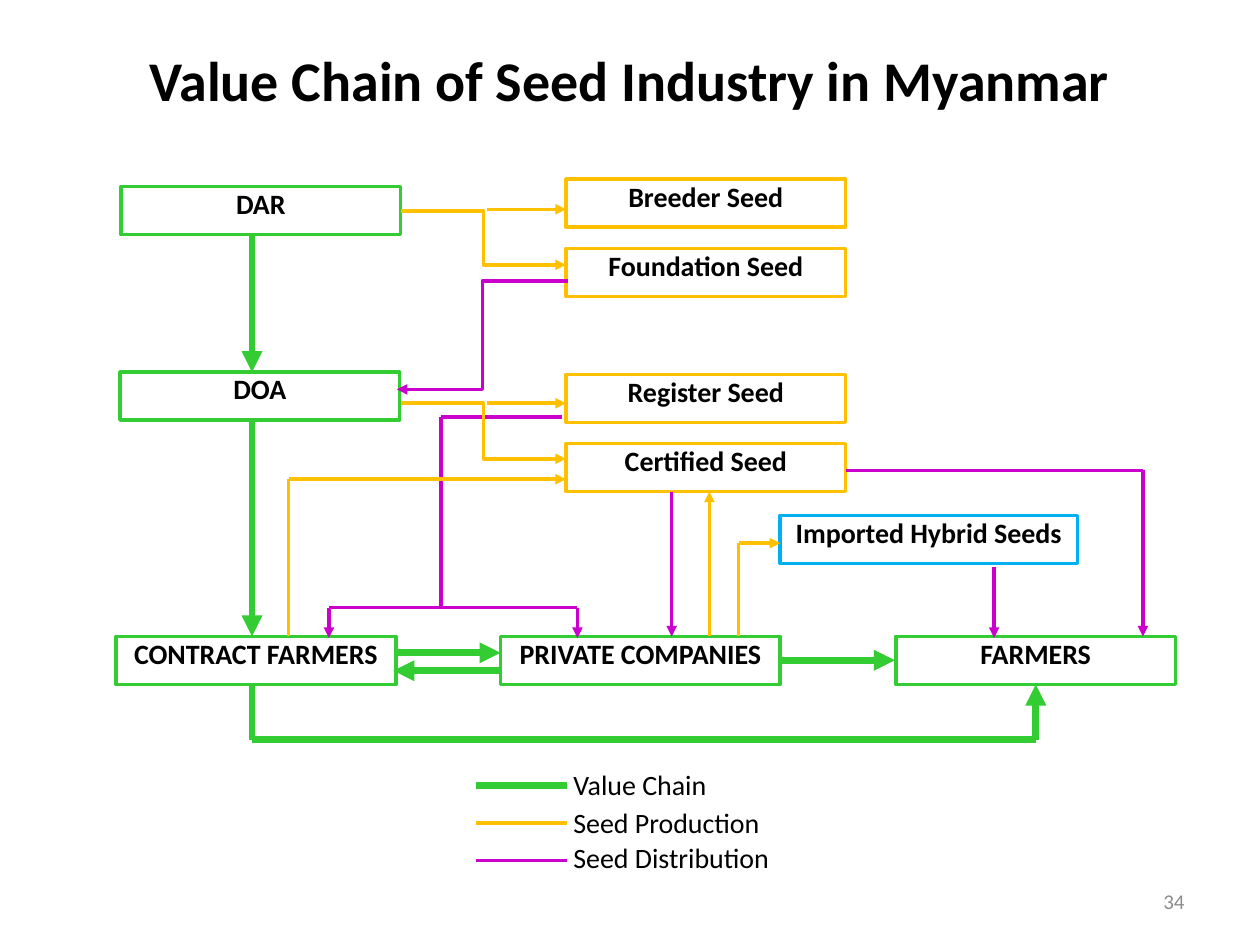
from itertools import pairwise

from lxml import etree
from pptx import Presentation
from pptx.dml.color import RGBColor
from pptx.enum.shapes import MSO_CONNECTOR, MSO_SHAPE
from pptx.enum.text import MSO_ANCHOR, PP_ALIGN
from pptx.oxml.ns import qn
from pptx.util import Cm, Pt

STRAIGHT, ELBOW = MSO_CONNECTOR.STRAIGHT, MSO_CONNECTOR.ELBOW
RECTANGLE = MSO_SHAPE.RECTANGLE
TOP, MIDDLE = MSO_ANCHOR.TOP, MSO_ANCHOR.MIDDLE
LEFT, CENTER, RIGHT = PP_ALIGN.LEFT, PP_ALIGN.CENTER, PP_ALIGN.RIGHT

FONT = "Calibri"
BLACK, WHITE, GRAY = "000000", "FFFFFF", "8C8C8C"
GREEN, AMBER, PURPLE, BLUE = "33CC33", "FFC000", "CC00CC", "00B0F0"
LINE_WIDTH = {GREEN: 4, AMBER: 2, PURPLE: 2}

BOX_WIDTH, BOX_HEIGHT = 5.64, 0.97
SEED_LEFT = 9.07
ACTOR_TOP = 9.22
ACTOR_BOTTOM = ACTOR_TOP + BOX_HEIGHT

# Boxes: label, left, top, width, outline (cm within the diagram)
BOXES = [
    ("DAR", 0.1, 0.15, BOX_WIDTH, GREEN),
    ("DOA", 0.08, 3.89, BOX_WIDTH, GREEN),
    ("Breeder Seed", SEED_LEFT, 0, BOX_WIDTH, AMBER),
    ("Foundation Seed", SEED_LEFT, 1.4, BOX_WIDTH, AMBER),
    ("Register Seed", SEED_LEFT, 3.94, BOX_WIDTH, AMBER),
    ("Certified Seed", SEED_LEFT, 5.33, BOX_WIDTH, AMBER),
    ("Imported Hybrid Seeds", 13.39, 6.78, 5.99, BLUE),
    ("CONTRACT FARMERS", 0, ACTOR_TOP, BOX_WIDTH, GREEN),
    ("PRIVATE COMPANIES", 7.75, ACTOR_TOP, BOX_WIDTH, GREEN),
    ("FARMERS", 15.72, ACTOR_TOP, BOX_WIDTH, GREEN),
]

# Routes of straight pieces: colour, arrow at the end, points
ROUTES = [
    # Seed distribution
    (PURPLE, False, [(8.99, 4.8), (6.55, 4.8), (6.55, 8.64)]),
    (PURPLE, True, [(6.55, 8.64), (4.29, 8.64), (4.29, 9.25)]),
    (PURPLE, True, [(6.55, 8.64), (9.3, 8.64), (9.3, 9.25)]),
    (PURPLE, True, [(14.71, 5.87), (20.7, 5.87), (20.7, ACTOR_TOP)]),
    (PURPLE, True, [(11.2, 6.3), (11.2, ACTOR_TOP)]),
    (PURPLE, True, [(17.7, 7.82), (17.7, 9.25)]),
    # Seed production
    (AMBER, True, [(3.48, ACTOR_TOP), (3.48, 6.05), (SEED_LEFT, 6.05)]),
    (AMBER, True, [(7.47, 0.61), (SEED_LEFT, 0.61)]),
    (AMBER, True, [(7.47, 4.52), (SEED_LEFT, 4.52)]),
    (AMBER, True, [(11.96, ACTOR_TOP), (11.96, 6.3)]),
    (AMBER, True, [(12.55, ACTOR_TOP), (12.55, 7.34), (13.39, 7.34)]),
    # Value chain
    (GREEN, True, [(2.74, 1.12), (2.74, 3.89)]),
    (GREEN, True, [(2.74, 4.85), (2.74, ACTOR_TOP)]),
    (GREEN, True, [(5.64, 9.55), (7.75, 9.55)]),
    (GREEN, True, [(7.72, 9.91), (5.59, 9.91)]),
    (GREEN, True, [(13.39, 9.7), (15.7, 9.7)]),
    (GREEN, True, [(2.74, ACTOR_BOTTOM), (2.74, 11.3), (18.54, 11.3), (18.54, ACTOR_BOTTOM)]),
]

# Elbow connectors: colour, start, end
ELBOWS = [
    (AMBER, (5.74, 0.64), (SEED_LEFT, 1.73)),
    (AMBER, (5.74, 4.52), (SEED_LEFT, 5.64)),
    (PURPLE, (9.12, 2.06), (5.66, 4.24)),
]

# Legend: label, colour, label top, label width
LEGEND = [
    ("Value Chain", GREEN, 0, 3.58),
    ("Seed Production", AMBER, 0.76, 5.44),
    ("Seed Distribution", PURPLE, 1.47, 5.44),
]


def rgb(color):
    return RGBColor.from_string(color)


def write(text_frame, text, size, color, align, anchor, bold=False):
    text_frame.word_wrap = True
    text_frame.vertical_anchor = anchor
    paragraph = text_frame.paragraphs[0]
    paragraph.alignment = align
    run = paragraph.add_run()
    run.text = text
    run.font.name = FONT
    run.font.size = Pt(size)
    run.font.bold = bold
    run.font.color.rgb = rgb(color)


def add_label(slide, text, left, top, width, height, align, outline=None, bold=False):
    shape = slide.shapes.add_shape(RECTANGLE, Cm(left), Cm(top), Cm(width), Cm(height))
    shape.shadow.inherit = False
    shape.fill.solid()
    shape.fill.fore_color.rgb = rgb(WHITE)
    if outline:
        shape.line.color.rgb = rgb(outline)
        shape.line.width = Pt(2)
    else:
        shape.line.fill.background()
    text_frame = shape.text_frame
    text_frame.margin_left = text_frame.margin_right = 0
    text_frame.margin_top = text_frame.margin_bottom = 0
    write(text_frame, text, 16, BLACK, align, TOP, bold)


def add_line(slide, kind, start, end, color, arrow, left, top):
    connector = slide.shapes.add_connector(
        kind, Cm(left + start[0]), Cm(top + start[1]), Cm(left + end[0]), Cm(top + end[1]))
    connector.line.color.rgb = rgb(color)
    connector.line.width = Pt(LINE_WIDTH[color])
    if arrow:
        etree.SubElement(connector.line._get_or_add_ln(), qn("a:tailEnd"), type="triangle")
    etree.SubElement(connector._element.spPr, qn("a:effectLst"))


def add_title(slide, left, top, width, height):
    title = slide.shapes.title
    title.left, title.top = Cm(left), Cm(top)
    title.width, title.height = Cm(width), Cm(height)
    write(title.text_frame, "Value Chain of Seed Industry in Myanmar",
          32, BLACK, CENTER, MIDDLE, bold=True)


def add_diagram(slide, left, top):
    for text, x, y, width, outline in BOXES:
        add_label(slide, text, left + x, top + y, width, BOX_HEIGHT, CENTER, outline, bold=True)
    for color, arrow, points in ROUTES:
        for start, end in pairwise(points):
            is_last = end == points[-1]
            add_line(slide, STRAIGHT, start, end, color, arrow and is_last, left, top)
    for color, start, end in ELBOWS:
        add_line(slide, ELBOW, start, end, color, True, left, top)


def add_legend(slide, left, top):
    for index, (text, color, label_top, width) in enumerate(LEGEND):
        line_top = 0.36 + 0.76 * index
        add_label(slide, text, left + 1.96, top + label_top, width, 1.04, LEFT)
        add_line(slide, STRAIGHT, (0, line_top), (1.83, line_top), color, False, left, top)


def add_page_number(slide, left, top, width, height):
    box = slide.shapes.add_textbox(Cm(left), Cm(top), Cm(width), Cm(height))
    write(box.text_frame, "34", 12, GRAY, RIGHT, MIDDLE)


def main():
    presentation = Presentation()
    presentation.slide_width, presentation.slide_height = Cm(25.4), Cm(19.05)
    slide = presentation.slides.add_slide(presentation.slide_layouts[5])
    add_title(slide, 1.27, 0, 22.86, 3.18)
    add_diagram(slide, 2.34, 3.61)
    add_legend(slide, 9.6, 15.47)
    add_page_number(slide, 18.21, 17.65, 5.92, 1.02)
    presentation.save("out.pptx")


if __name__ == "__main__":
    main()
